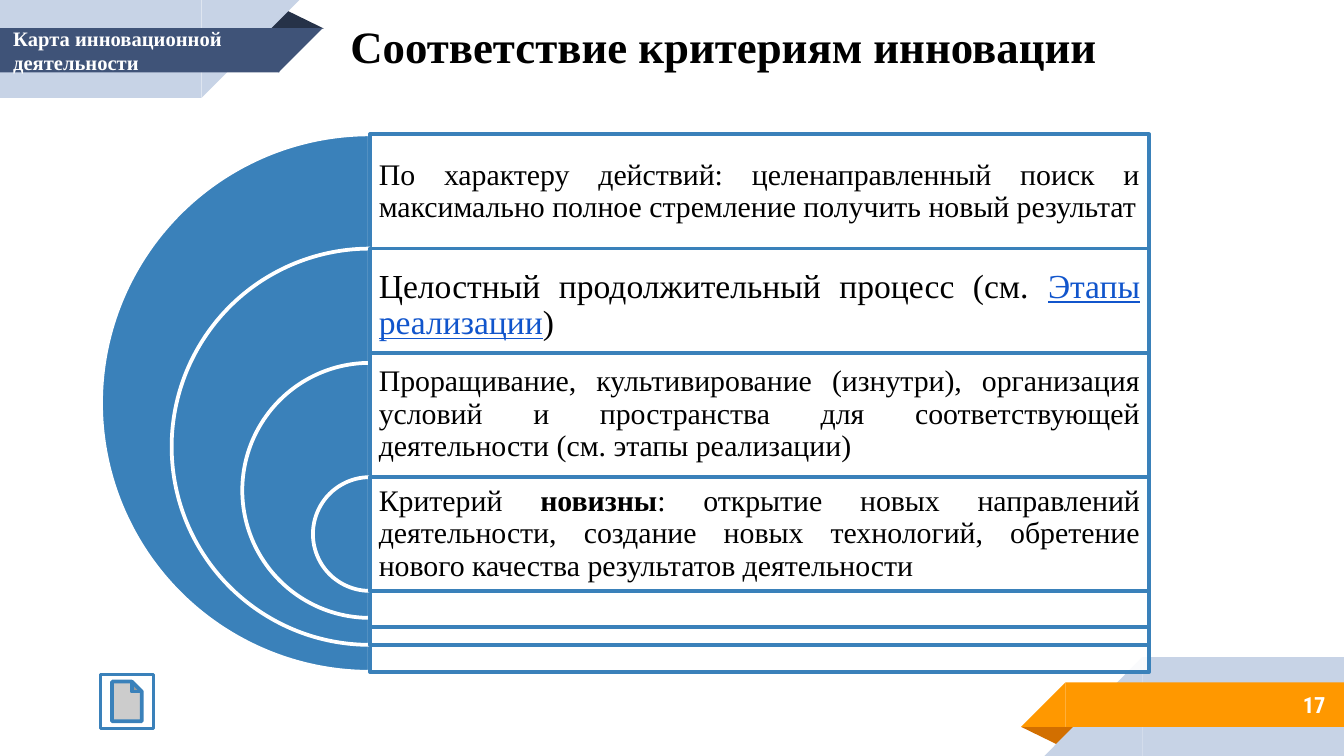
from lxml import etree
from pptx import Presentation
from pptx import util as u
from pptx.dml import color
from pptx.enum import shapes, text
from pptx.oxml import ns

SHAPE = shapes.MSO_SHAPE
ALIGN = text.PP_ALIGN
SERIF = "Times New Roman"
BLUE = "3A81BA"
PALE = "C7D3E6"

presentation = Presentation()
presentation.slide_width = u.Cm(25.4)
presentation.slide_height = u.Cm(14.29)
slide = presentation.slides.add_slide(presentation.slide_layouts[6])


def rgb(value):
    return color.RGBColor.from_string(value)


def add_shape(kind, box, fill, line=None):
    shape = slide.shapes.add_shape(kind, *[u.Cm(length) for length in box])
    shape.shadow.inherit = False
    shape.fill.solid()
    shape.fill.fore_color.rgb = rgb(fill)
    if line:
        shape.line.color.rgb = rgb(line)
        shape.line.width = u.Pt(2)
    else:
        shape.line.fill.background()
    return shape


ribbon_parts = [
    (SHAPE.ISOSCELES_TRIANGLE, (19.3, 13.74, 1.09, 0.36), "D26F00", 180, False),
    (SHAPE.RECTANGLE, (21.59, 12.42, 3.81, 1.87), PALE, 0, True),
    (SHAPE.RIGHT_TRIANGLE, (19.74, 12.42, 1.85, 1.87), PALE, 0, True),
    (SHAPE.RECTANGLE, (20.14, 12.9, 5.26, 0.84), "FF9800", 0, True),
    (SHAPE.RIGHT_TRIANGLE, (19.3, 12.9, 0.84, 0.84), "FF9800", 0, True),
    (SHAPE.ISOSCELES_TRIANGLE, (5.03, 0.18, 1.09, 0.36), "263248", 0, False),
    (SHAPE.RECTANGLE, (0, 0, 3.81, 1.85), PALE, 180, True),
    (SHAPE.RIGHT_TRIANGLE, (3.81, 0, 1.85, 1.85), PALE, 180, True),
    (SHAPE.RECTANGLE, (0, 0.53, 5.28, 0.84), "3F5378", 180, True),
    (SHAPE.RIGHT_TRIANGLE, (5.26, 0.53, 0.84, 0.84), "3F5378", 180, True),
]
for kind, box, fill, rotation, flipped in ribbon_parts:
    shape = add_shape(kind, box, fill)
    shape.rotation = rotation
    if flipped:
        shape._element.spPr.xfrm.set("flipH", "1")
    if kind == SHAPE.ISOSCELES_TRIANGLE:
        shape.adjustments[0] = 0.324

labels = [
    ("17", (21.16, 12.88, 4.14, 0.89), 12, "Roboto Condensed", "FFFFFF", ALIGN.RIGHT, text.MSO_ANCHOR.MIDDLE),
    ("Соответствие критериям инновации", (4.78, 0.23, 17.78, 1.27), 24, SERIF, "000000", ALIGN.CENTER, text.MSO_ANCHOR.TOP),
    ("Карта инновационной\nдеятельности", (0, 0.36, 8.33, 1.19), 11, SERIF, "FFFFFF", ALIGN.LEFT, text.MSO_ANCHOR.TOP),
]
for wording, box, size, font_name, font_color, alignment, anchor in labels:
    text_frame = slide.shapes.add_textbox(*[u.Cm(length) for length in box]).text_frame
    text_frame.word_wrap = True
    text_frame.vertical_anchor = anchor
    text_frame.text = wording
    for paragraph in text_frame.paragraphs:
        paragraph.alignment = alignment
        for run in paragraph.runs:
            run.font.size = u.Pt(size)
            run.font.name = font_name
            run.font.bold = True
            run.font.color.rgb = rgb(font_color)

add_shape(SHAPE.ACTION_BUTTON_DOCUMENT, (1.9, 12.75, 1, 1.02), "FFFFFF", BLUE)

criteria = [
    (2.54, 10.16, 2.16, 16, ["По характеру действий: целенаправленный поиск и максимально полное стремление получить новый результат"]),
    (4.7, 7.49, 2.16, 18, ["Целостный продолжительный процесс (см. ", "Этапы реализации", ")"]),
    (6.68, 5.18, 2.31, 16, ["Проращивание, культивирование (изнутри), организация условий и пространства для соответствующей деятельности (см. этапы реализации)"]),
    (9.02, 2.16, 2.16, 16, ["Критерий ", "новизны", ": открытие новых направлений деятельности, создание новых технологий, обретение нового качества результатов деятельности"]),
]
center, panel_width = 6.99, 14.73
for index, (top, panel_height, text_height, size, wordings) in enumerate(criteria):
    diameter = 10.16 - 2.67 * index
    pie_box = (center - diameter / 2, 2.54 + 2.16 * index, diameter, diameter)
    pie = add_shape(SHAPE.PIE, pie_box, BLUE, "FFFFFF")
    pie.adjustments[0] = 54
    pie.adjustments[1] = 162

    panel = add_shape(SHAPE.RECTANGLE, (center, top, panel_width, panel_height), "FFFFFF", BLUE)
    panel_color = panel._element.spPr.find(ns.qn("a:solidFill"))[0]
    etree.SubElement(panel_color, ns.qn("a:alpha"), val="90000")

    text_box = slide.shapes.add_textbox(u.Cm(center), u.Cm(top), u.Cm(panel_width), u.Cm(text_height))
    text_frame = text_box.text_frame
    text_frame.word_wrap = True
    text_frame.vertical_anchor = text.MSO_ANCHOR.MIDDLE
    text_frame.margin_left = text_frame.margin_right = u.Cm(0.17)
    text_frame.margin_top = text_frame.margin_bottom = u.Cm(0.17)
    paragraph = text_frame.paragraphs[0]
    paragraph.alignment = ALIGN.JUSTIFY
    paragraph.line_spacing = 0.9
    for wording in wordings:
        run = paragraph.add_run()
        run.text = wording
        run.font.size = u.Pt(size)
        run.font.name = SERIF
        run.font.bold = wording == "новизны"
        is_reference = wording == "Этапы реализации"
        run.font.underline = is_reference
        run.font.color.rgb = rgb("1155CC" if is_reference else "000000")

presentation.save("out.pptx")
